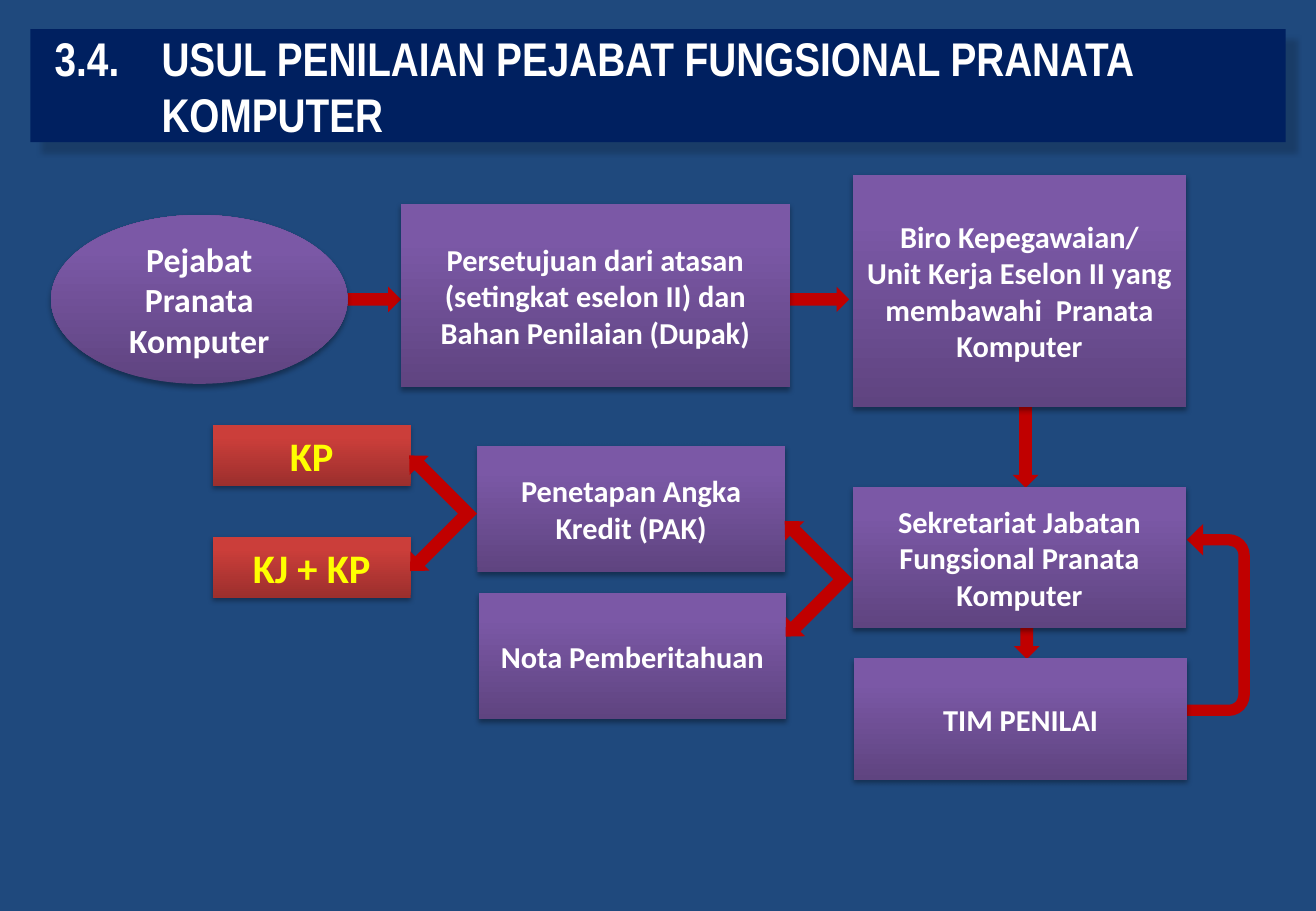
from pptx import Presentation, util as u
from pptx.dml.color import RGBColor
from pptx.enum import shapes, text
from pptx.oxml import parse_xml

NS = 'xmlns:a="http://schemas.openxmlformats.org/drawingml/2006/main"'
S = shapes.MSO_SHAPE
BACKGROUND, BANNER, ARROW = "1F497D", "002060", "C00000"
PURPLE, RED = ("5F4480", "7B58A6"), ("9C2F2D", "CB3E3A")

TITLE = "3.4. \tUSUL PENILAIAN PEJABAT FUNGSIONAL PRANATA KOMPUTER"
TITLE_BOX = (0.25, 0.24, 10.33, 0.93)

PROCESS = dict(colours=PURPLE, size=18, colour="FFFFFF")
OFFICER = dict(PROCESS, size=20)
OUTCOME = dict(colours=RED, size=24, colour="FFFF00")

# preset, box, style, paragraphs
STEPS = [
    (S.RECTANGLE, (1.75, 4.42, 1.63, 0.5), OUTCOME, ["KJ + KP"]),
    (S.RECTANGLE, (1.75, 3.5, 1.63, 0.5), OUTCOME, ["KP"]),
    (S.OVAL, (0.42, 1.77, 2.44, 1.39), OFFICER, ["Pejabat Pranata Komputer"]),
    (S.RECTANGLE, (7.02, 1.44, 2.74, 1.91), PROCESS,
     ["Biro Kepegawaian/",
      "Unit Kerja Eselon II yang membawahi  Pranata Komputer"]),
    (S.RECTANGLE, (7.02, 4.01, 2.74, 1.16), PROCESS,
     ["Sekretariat Jabatan Fungsional Pranata Komputer"]),
    (S.RECTANGLE, (3.93, 3.67, 2.53, 1.04), PROCESS,
     ["Penetapan Angka Kredit (PAK)"]),
    (S.RECTANGLE, (3.3, 1.68, 3.2, 1.51), PROCESS,
     ["Persetujuan dari atasan (setingkat eselon II) dan Bahan Penilaian (Dupak)"]),
    (S.RECTANGLE, (3.94, 4.88, 2.53, 1.04), PROCESS, ["Nota Pemberitahuan"]),
    (S.RECTANGLE, (7.03, 5.42, 2.74, 1.0), PROCESS, ["TIM PENILAI"]),
]

# left, top, rotation
STRAIGHT_ARROWS = [(2.62, 2.36, 0), (6.31, 2.36, 0), (8.1, 3.57, 90), (8.11, 4.98, 90)]
BRANCH_ARROWS = [(6.15, 4.37), (3.06, 3.83)]
RETURN_BOX = (9.15, 4.76, 1.58, 0.69)


def rgb(value):
    return RGBColor.from_string(value)


def place(sp, box):
    for name, value in zip(("left", "top", "width", "height"), box):
        setattr(sp, name, u.Inches(value))


def set_shadow(sp, alpha, blur, dist, angle):
    sp.shadow.inherit = False
    effects = sp._element.spPr.find("{*}effectLst")
    effects.append(parse_xml(
        f'<a:outerShdw {NS} blurRad="{u.Pt(blur)}" dist="{u.Pt(dist)}" '
        f'dir="{angle * 60000}" algn="tl" rotWithShape="0"><a:srgbClr val="000000">'
        f'<a:alpha val="{alpha * 1000}"/></a:srgbClr></a:outerShdw>'))


def add_run(p, content, font, size, colour):
    r = p.add_run()
    r.text = content
    for name, value in dict(name=font, size=u.Pt(size), bold=True).items():
        setattr(r.font, name, value)
    r.font.color.rgb = rgb(colour)


def format_title(title):
    place(title, TITLE_BOX)
    sp_pr = title._element.spPr
    sp_pr.append(parse_xml(f'<a:prstGeom {NS} prst="roundRect"><a:avLst/></a:prstGeom>'))
    title.fill.solid()
    title.fill.fore_color.rgb = rgb(BANNER)
    set_shadow(title, 16, 3, 9, 45)
    tf = title.text_frame
    tf.auto_size = text.MSO_AUTO_SIZE.NONE
    tf.vertical_anchor = text.MSO_ANCHOR.MIDDLE
    p = tf.paragraphs[0]
    p.alignment = text.PP_ALIGN.LEFT
    p_pr = p._p.get_or_add_pPr()
    p_pr.set("marL", str(u.Inches(0.98)))
    p_pr.set("indent", str(u.Inches(-0.88)))
    p_pr.append(parse_xml(
        f'<a:tabLst {NS}><a:tab pos="{u.Inches(0.98)}" algn="l"/></a:tabLst>'))
    add_run(p, TITLE, "Arial Narrow", 28, "FFFFFF")


def add_step(slide, preset, box, style, paragraphs):
    sp = slide.shapes.add_shape(preset, *map(u.Inches, box))
    sp.fill.gradient()
    sp.fill.gradient_angle = 90
    for stop, colour, position in zip(sp.fill.gradient_stops, style["colours"], (0, 0.8)):
        stop.color.rgb = rgb(colour)
        stop.position = position
    sp.line.fill.background()
    set_shadow(sp, 35, 3.1, 1.8, 90)
    tf = sp.text_frame
    tf.word_wrap = True
    for i, content in enumerate(paragraphs):
        p = tf.add_paragraph() if i else tf.paragraphs[0]
        p.alignment = text.PP_ALIGN.CENTER
        add_run(p, content, "Calibri", style["size"], style["colour"])


def add_arrow(slide, preset, box, rotation, adjustments=()):
    sp = slide.shapes.add_shape(preset, *map(u.Inches, box))
    sp.rotation = rotation
    for i, value in enumerate(adjustments):
        sp.adjustments[i] = value
    sp.fill.solid()
    sp.fill.fore_color.rgb = rgb(ARROW)
    sp.line.fill.background()
    sp.shadow.inherit = False
    return sp


def main():
    prs = Presentation()
    prs.slide_width, prs.slide_height = u.Inches(10.83), u.Inches(7.5)
    slide = prs.slides.add_slide(prs.slide_layouts[5])
    slide.background.fill.solid()
    slide.background.fill.fore_color.rgb = rgb(BACKGROUND)
    format_title(slide.shapes.title)

    return_arrow = add_arrow(slide, S.U_TURN_ARROW, RETURN_BOX, 270,
                             (0.135, 0.187, 0.192, 0.253, 0.75))
    return_arrow._element.spPr.xfrm.set("flipV", "1")
    for left, top, rotation in STRAIGHT_ARROWS:
        add_arrow(slide, S.RIGHT_ARROW, (left, top, 0.68, 0.21), rotation)
    for step in STEPS:
        add_step(slide, *step)
    for left, top in BRANCH_ARROWS:
        add_arrow(slide, S.LEFT_UP_ARROW, (left, top, 0.78, 0.79), 315,
                  (0.143, 0.143, 0.149))
    prs.save("out.pptx")


if __name__ == "__main__":
    main()
